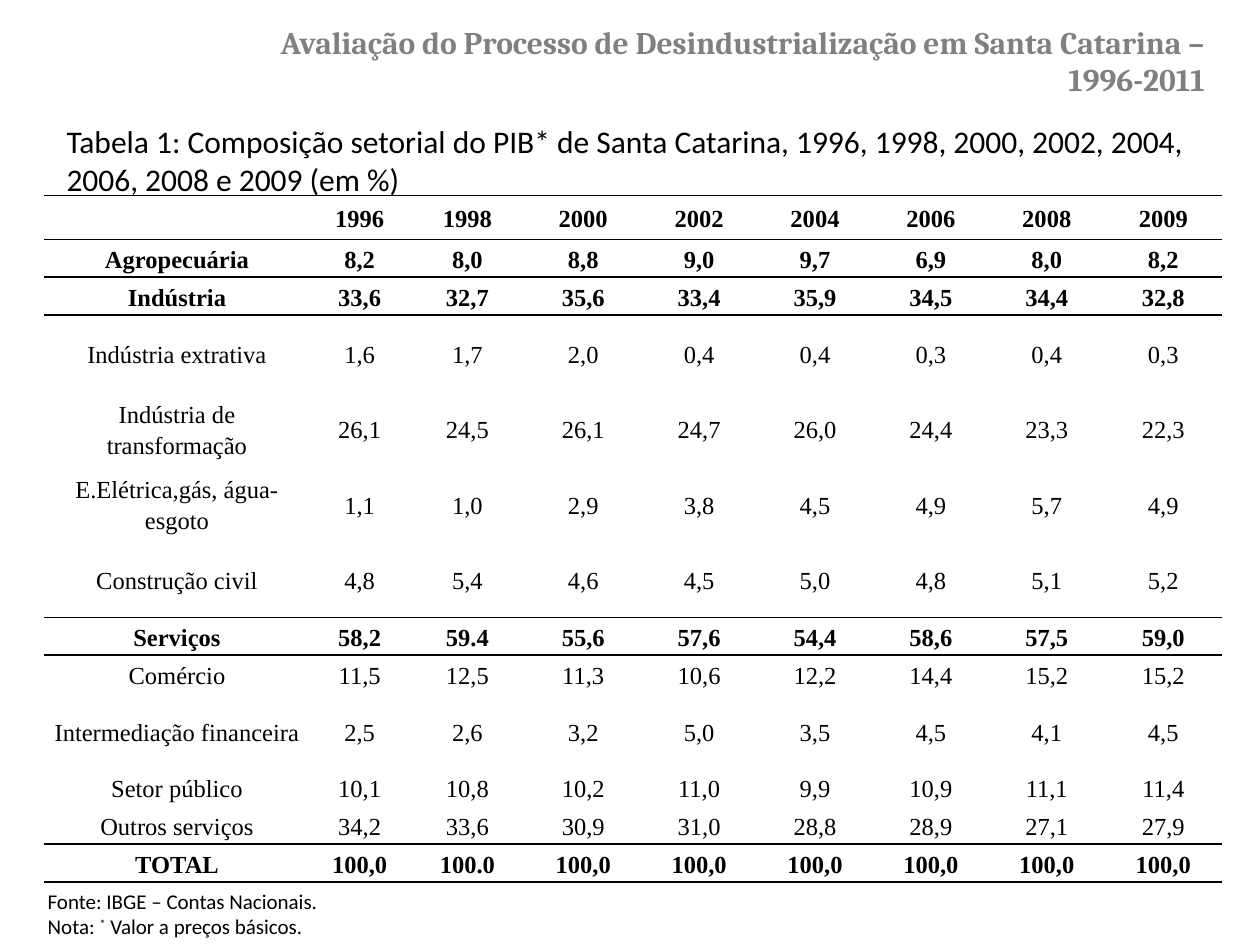
from dataclasses import dataclass

from lxml import etree
from pptx import Presentation
from pptx.dml.color import RGBColor
from pptx.enum import text
from pptx.oxml import ns
from pptx.util import Inches, Pt


@dataclass(frozen=True)
class Theme:
    ink: str = "000000"
    muted: str = "808080"
    title_font: str = "Cambria"
    body_font: str = "Calibri"
    table_font: str = "Times New Roman"
    heading_size: int = 18
    table_size: int = 14
    note_size: int = 12
    rule_width: int = 1


@dataclass(frozen=True)
class Block:
    left: float
    top: float
    width: float
    height: float
    lines: tuple[str, ...]
    font: str
    size: int
    color: str
    bold: bool = False
    align: text.PP_ALIGN = text.PP_ALIGN.LEFT
    anchor: text.MSO_ANCHOR = text.MSO_ANCHOR.TOP


@dataclass(frozen=True)
class Row:
    label: str
    values: str
    height: float = 0.3
    bold: bool = False


THEME = Theme()
BLOCKS = (
    Block(2.09, 0.21, 7.57, 0.54,
          ("Avaliação do Processo de Desindustrialização em Santa Catarina – 1996-2011",),
          THEME.title_font, THEME.heading_size, THEME.muted, True,
          text.PP_ALIGN.RIGHT, text.MSO_ANCHOR.MIDDLE),
    Block(0.43, 0.92, 9.37, 0.71,
          ("Tabela 1: Composição setorial do PIB* de Santa Catarina, 1996, 1998, 2000, "
           "2002, 2004, 2006, 2008 e 2009 (em %)",),
          THEME.body_font, THEME.heading_size, THEME.ink),
    Block(0.28, 7, 9.72, 0.5,
          ("Fonte: IBGE – Contas Nacionais.", "Nota: * Valor a preços básicos."),
          THEME.body_font, THEME.note_size, THEME.ink),
)
ROWS = (
    Row("", "1996 1998 2000 2002 2004 2006 2008 2009", 0.35, True),
    Row("Agropecuária", "8,2 8,0 8,8 9,0 9,7 6,9 8,0 8,2", bold=True),
    Row("Indústria", "33,6 32,7 35,6 33,4 35,9 34,5 34,4 32,8", bold=True),
    Row("Indústria extrativa", "1,6 1,7 2,0 0,4 0,4 0,3 0,4 0,3", 0.6),
    Row("Indústria de transformação", "26,1 24,5 26,1 24,7 26,0 24,4 23,3 22,3", 0.6),
    Row("E.Elétrica,gás, água-esgoto", "1,1 1,0 2,9 3,8 4,5 4,9 5,7 4,9", 0.6),
    Row("Construção civil", "4,8 5,4 4,6 4,5 5,0 4,8 5,1 5,2", 0.6),
    Row("Serviços", "58,2 59.4 55,6 57,6 54,4 58,6 57,5 59,0", bold=True),
    Row("Comércio", "11,5 12,5 11,3 10,6 12,2 14,4 15,2 15,2"),
    Row("Intermediação financeira", "2,5 2,6 3,2 5,0 3,5 4,5 4,1 4,5", 0.6),
    Row("Setor público", "10,1 10,8 10,2 11,0 9,9 10,9 11,1 11,4"),
    Row("Outros serviços", "34,2 33,6 30,9 31,0 28,8 28,9 27,1 27,9"),
    Row("TOTAL", "100,0 100.0 100,0 100,0 100,0 100,0 100,0 100,0", bold=True),
)
COLUMN_WIDTHS = (2.11, 0.79, *[0.92] * 6, 0.93)


def style_font(font, name: str, size: int, color: str, bold: bool) -> None:
    font.name, font.size, font.bold = name, Pt(size), bold
    font.color.rgb = RGBColor.from_string(color)


def draw_block(slide, block: Block) -> None:
    box = slide.shapes.add_textbox(
        *map(Inches, (block.left, block.top, block.width, block.height)))
    frame = box.text_frame
    frame.word_wrap = True
    frame.vertical_anchor = block.anchor
    for index, line in enumerate(block.lines):
        para = frame.add_paragraph() if index else frame.paragraphs[0]
        para.alignment = block.align
        style_font(para.font, block.font, block.size, block.color, block.bold)
        before, star, after = line.partition(" * ")
        para.add_run().text = before + " " if star else before
        if star:
            mark = para.add_run()
            mark.text = "*"
            mark.font._element.set("baseline", "30000")
            para.add_run().text = " " + after


def set_borders(cell, top: bool, bottom: bool) -> None:
    properties = cell._tc.get_or_add_tcPr()
    for side, ruled in (("L", False), ("R", False), ("T", top), ("B", bottom)):
        line = etree.SubElement(properties, ns.qn(f"a:ln{side}"),
                                w=str(Pt(THEME.rule_width)))
        if ruled:
            fill = etree.SubElement(line, ns.qn("a:solidFill"))
            etree.SubElement(fill, ns.qn("a:srgbClr"), val=THEME.ink)
        else:
            etree.SubElement(line, ns.qn("a:noFill"))


def fill_cell(cell, content: str, bold: bool) -> None:
    cell.fill.background()
    cell.vertical_anchor = text.MSO_ANCHOR.MIDDLE
    cell.margin_left = cell.margin_right = Inches(0.05)
    cell.margin_top = cell.margin_bottom = 0
    para = cell.text_frame.paragraphs[0]
    para.alignment = text.PP_ALIGN.CENTER
    para.line_spacing = 1.15
    para.space_before = Pt(6)
    style_font(para.font, THEME.table_font, THEME.table_size, THEME.ink, bold)
    if content:
        para.add_run().text = content


def draw_table(slide, rows: tuple[Row, ...]) -> None:
    table = slide.shapes.add_table(
        len(rows), len(COLUMN_WIDTHS), Inches(0.35), Inches(1.55),
        Inches(sum(COLUMN_WIDTHS)), Inches(sum(row.height for row in rows))).table
    table.first_row = table.horz_banding = False
    for column, width in zip(table.columns, COLUMN_WIDTHS):
        column.width = Inches(width)
    for index, row in enumerate(rows):
        table.rows[index].height = Inches(row.height)
        top = row.bold or rows[index - 1].bold
        bottom = row.bold or rows[index + 1].bold
        for column, content in enumerate((row.label, *row.values.split())):
            cell = table.cell(index, column)
            set_borders(cell, top, bottom)
            fill_cell(cell, content, row.bold)


def main() -> None:
    deck = Presentation()
    deck.slide_width, deck.slide_height = Inches(10), Inches(7.5)
    slide = deck.slides.add_slide(deck.slide_layouts[6])
    for block in BLOCKS:
        draw_block(slide, block)
    draw_table(slide, ROWS)
    deck.save("out.pptx")


if __name__ == "__main__":
    main()
